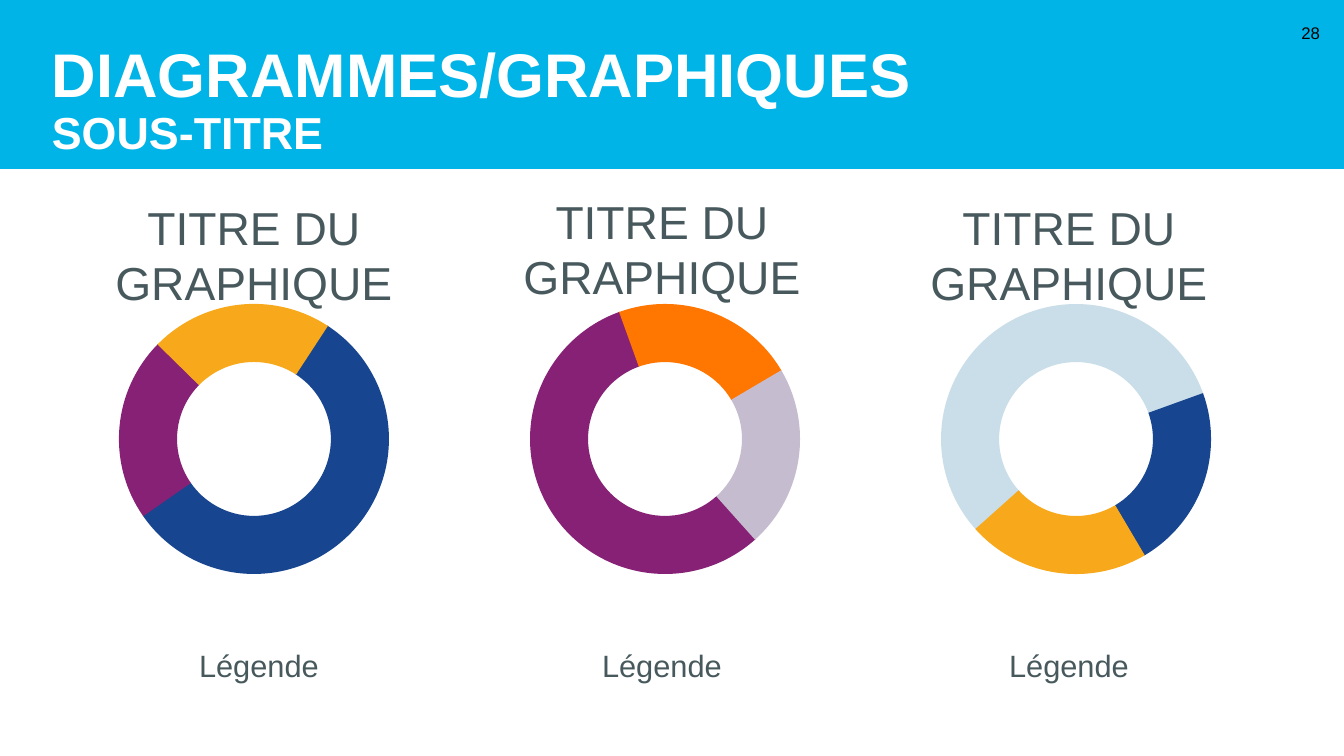
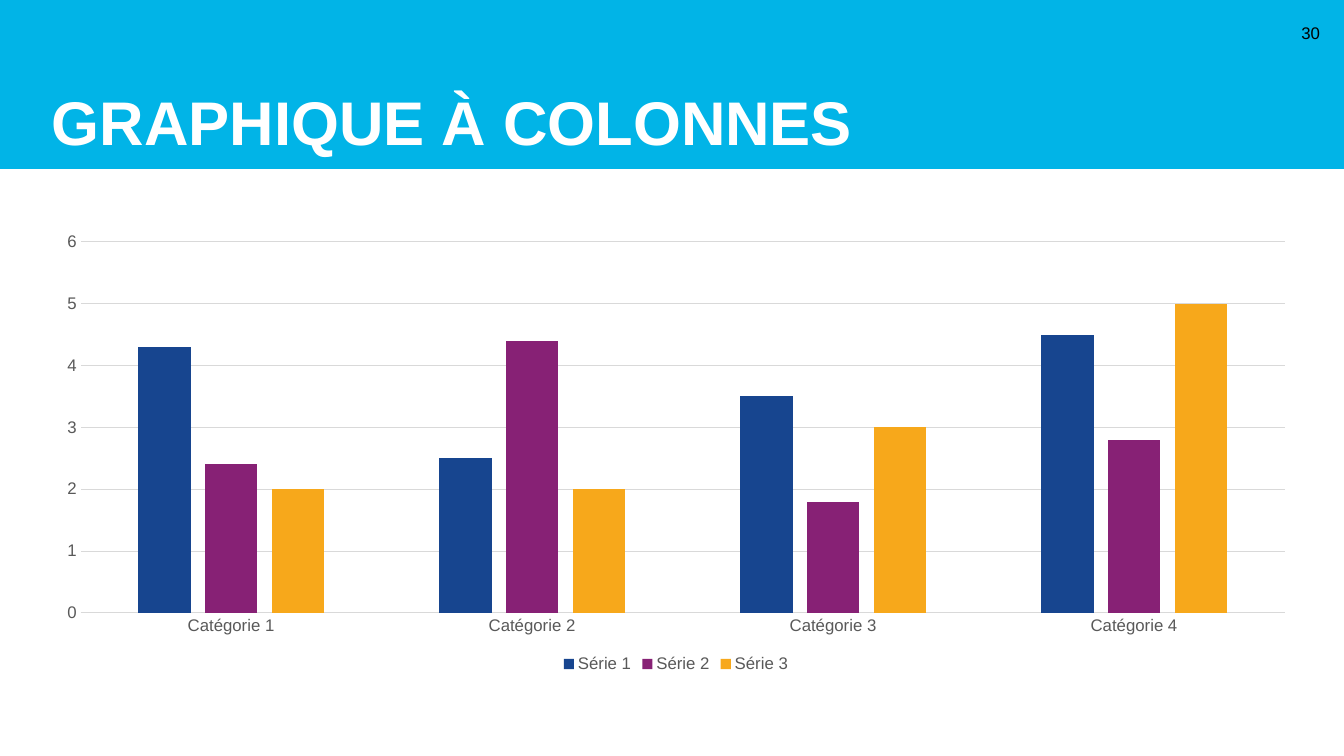
"""Build two slides of chart templates: three rings, then clustered columns."""
from collections import namedtuple

from pptx import Presentation
from pptx import util as u
from pptx.chart import data as chart_data
from pptx.dml import color
from pptx.enum import chart as chart_kinds, shapes, text

Box = namedtuple("Box", "left top width height")
SCALE = 914400 / 100.8
FONT = "Arial"
COLOURS = {
    "band": "01B4E7", "white": "FFFFFF", "black": "000000",
    "slate": "48595D", "axis": "595959", "grid": "D9D9D9",
    "blue": "17458F", "purple": "872175", "gold": "F7A81B",
    "orange": "FF7600", "lilac": "C6BCD0", "ice": "C9DEE9",
}
PAGE = Box(0, 0, 1344, 756)
BAND = Box(0, 0, 1344, 169)
ARC_ANGLES = [(302.8, 145.4), (145.1, 224.6), (224.4, 303.2)]
RING_COLUMNS = [
    (Box(68, 194, 372, 67), Box(73, 575, 372, 181), 0, ("blue", "purple", "gold")),
    (Box(483, 188, 358, 67), Box(476, 575, 372, 181), 105, ("purple", "orange", "lilac")),
    (Box(883, 194, 372, 67), Box(883, 575, 372, 181), 195, ("ice", "blue", "gold")),
]
SERIES = [
    ("Série 1", (4.3, 2.5, 3.5, 4.5), "blue"),
    ("Série 2", (2.4, 4.4, 1.8, 2.8), "purple"),
    ("Série 3", (2, 2, 3, 5), "gold"),
]


def px(length):
    """Turn pixels into EMU."""
    return u.Emu(round(length * SCALE))


def rgb(name):
    """Look up a named colour."""
    return color.RGBColor.from_string(COLOURS[name])


def place(box):
    """Turn a pixel box into EMU arguments."""
    return [px(length) for length in box]


def set_font(font, size, colour, bold=False):
    """Apply the shared typeface with a size and colour."""
    font.name = FONT
    font.size = u.Pt(size)
    font.bold = bold
    font.color.rgb = rgb(colour)


def add_filled(parent, kind, box, colour):
    """Add a flat preset shape without outline or shadow."""
    shape = parent.add_shape(kind, *place(box))
    shape.shadow.inherit = False
    shape.fill.solid()
    shape.fill.fore_color.rgb = rgb(colour)
    shape.line.fill.background()
    return shape


def add_text(page, box, words, size, colour, align="CENTER", anchor="MIDDLE", bold=False):
    """Add a wrapping one-paragraph text box and return its frame."""
    frame = page.shapes.add_textbox(*place(box)).text_frame
    frame.word_wrap = True
    frame.vertical_anchor = text.MSO_ANCHOR[anchor]
    para = frame.paragraphs[0]
    para.alignment = text.PP_ALIGN[align]
    set_font(para.font, size, colour, bold)
    para.add_run().text = words
    return frame


def add_page(deck, title, number, subtitle=None):
    """Add a blank page with the title band and page number."""
    page = deck.slides.add_slide(deck.slide_layouts[6])
    add_filled(page.shapes, shapes.MSO_SHAPE.RECTANGLE, BAND, "band")
    title_box = Box(BAND.left + 42, BAND.top, BAND.width - 76, BAND.height)
    frame = add_text(page, title_box, title, 44, "white", "LEFT", "BOTTOM", True)
    frame.margin_top, frame.margin_bottom = 0, px(10)
    para = frame.paragraphs[0]
    para.line_spacing = 0.9
    if subtitle:
        para.add_line_break()
        span = para.add_run()
        span.text = subtitle
        span.font.size = u.Pt(32)
    number_box = Box(BAND.width - 60, BAND.top + 13, 46, 40)
    add_text(page, number_box, str(number), 12, "black", "RIGHT")
    return page


def add_ring(page, box, rotation, colours):
    """Add a grouped ring of three block arcs."""
    group = page.shapes.add_group_shape()
    for (start, end), colour in zip(ARC_ANGLES, colours):
        arc = add_filled(group.shapes, shapes.MSO_SHAPE.BLOCK_ARC, box, colour)
        arc.rotation = rotation
        arc.adjustments[0] = start * 0.6
        arc.adjustments[1] = end * 0.6
        arc.adjustments[2] = 0.215


def add_ring_page(deck):
    """Build the page of three titled rings."""
    page = add_page(deck, "DIAGRAMMES/GRAPHIQUES", 28, "SOUS-TITRE")
    for index, (heading, caption, rotation, colours) in enumerate(RING_COLUMNS):
        frame = add_text(page, heading, "TITRE DU GRAPHIQUE", 33, "slate", anchor="TOP")
        frame.auto_size = text.MSO_AUTO_SIZE.SHAPE_TO_FIT_TEXT
        add_text(page, caption, "Légende", 22, "slate")
        add_ring(page, Box(119 + 411 * index, 304, 270, 270), rotation, colours)


def style_line(line, colour):
    """Give a chart line its colour and width."""
    line.color.rgb = rgb(colour)
    line.width = u.Pt(0.75)


def add_columns(page, box):
    """Add the clustered column chart."""
    data = chart_data.CategoryChartData()
    data.categories = [f"Catégorie {number}" for number in range(1, 5)]
    for name, values, _ in SERIES:
        data.add_series(name, values)
    chart = page.shapes.add_chart(
        chart_kinds.XL_CHART_TYPE.COLUMN_CLUSTERED, *place(box), data).chart
    set_font(chart.font, 10, "black")
    chart.has_title = False
    chart.has_legend = True
    chart.legend.position = chart_kinds.XL_LEGEND_POSITION.BOTTOM
    chart.legend.include_in_layout = False
    set_font(chart.legend.font, 12, "axis")
    plot = chart.plots[0]
    plot.vary_by_categories = False
    plot.gap_width, plot.overlap = 219, -27
    for series, (_, _, colour) in zip(plot.series, SERIES):
        series.format.fill.solid()
        series.format.fill.fore_color.rgb = rgb(colour)
    for axis in (chart.category_axis, chart.value_axis):
        axis.major_tick_mark = chart_kinds.XL_TICK_MARK.NONE
        axis.minor_tick_mark = chart_kinds.XL_TICK_MARK.NONE
        set_font(axis.tick_labels.font, 12, "axis")
    style_line(chart.category_axis.format.line, "grid")
    values = chart.value_axis
    values.minimum_scale, values.maximum_scale, values.major_unit = 0, 6, 1
    values.format.line.fill.background()
    values.has_major_gridlines = True
    style_line(values.major_gridlines.format.line, "grid")


def add_column_page(deck):
    """Build the page with the column chart."""
    page = add_page(deck, "GRAPHIQUE À COLONNES", 30)
    add_columns(page, Box(42, 224, 1268, 453))


def main():
    """Build and save the deck."""
    deck = Presentation()
    deck.slide_width, deck.slide_height = px(PAGE.width), px(PAGE.height)
    add_ring_page(deck)
    add_column_page(deck)
    deck.save("out.pptx")


if __name__ == "__main__":
    main()
